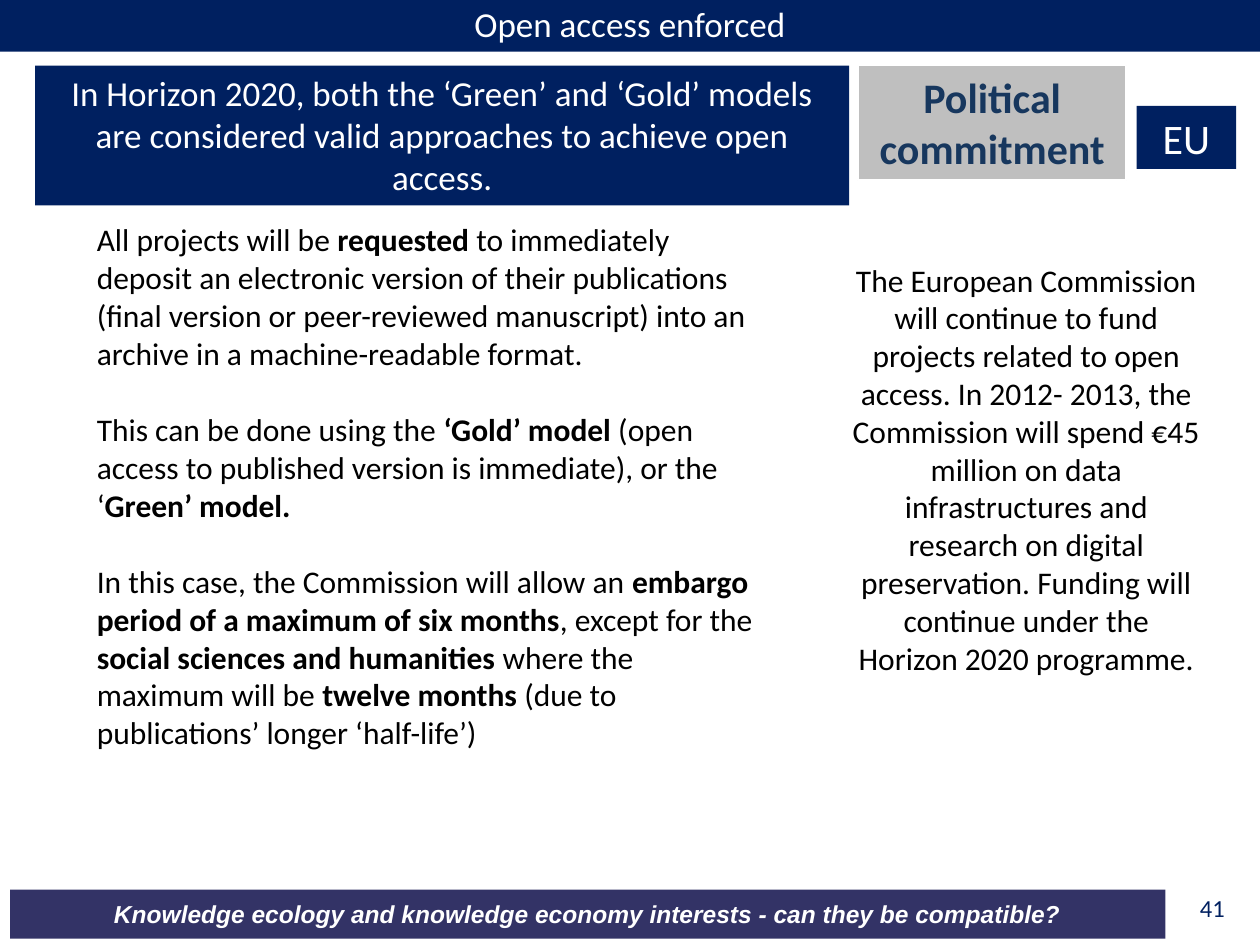
from dataclasses import dataclass
from typing import Optional

import pptx
import pptx.dml.color
import pptx.enum.shapes
import pptx.enum.text
import pptx.util

Inches = pptx.util.Inches
Pt = pptx.util.Pt
RGBColor = pptx.dml.color.RGBColor
ALIGN = pptx.enum.text.PP_ALIGN
ANCHOR = pptx.enum.text.MSO_ANCHOR

NAVY = RGBColor(0x00, 0x20, 0x60)
INDIGO = RGBColor(0x33, 0x33, 0x66)
STEEL = RGBColor(0x17, 0x37, 0x5E)
GREY = RGBColor(0xBF, 0xBF, 0xBF)
WHITE = RGBColor(0xFF, 0xFF, 0xFF)
BLACK = RGBColor(0x00, 0x00, 0x00)


@dataclass
class Block:
    """A text block; within a paragraph every second run is bold."""
    left: float
    top: float
    width: float
    height: float
    paragraphs: list[list[str]]
    size: int
    color: RGBColor = WHITE
    fill: Optional[RGBColor] = None
    line: Optional[RGBColor] = None
    align: ALIGN = ALIGN.CENTER
    anchor: ANCHOR = ANCHOR.TOP
    font: str = "Calibri"
    bold: bool = False
    italic: bool = False
    gap: int = 0
    inset: bool = True


def add_block(s: pptx.slide.Slide, b: Block) -> None:
    box = [Inches(v) for v in (b.left, b.top, b.width, b.height)]
    if b.fill is None:
        sp = s.shapes.add_textbox(*box)
    else:
        sp = s.shapes.add_shape(pptx.enum.shapes.MSO_SHAPE.RECTANGLE, *box)
        sp.shadow.inherit = False
        sp.fill.solid()
        sp.fill.fore_color.rgb = b.fill
        if b.line is None:
            sp.line.fill.background()
        else:
            sp.line.color.rgb = b.line
            sp.line.width = Pt(1)

    tf = sp.text_frame
    tf.word_wrap = True
    tf.vertical_anchor = b.anchor
    if not b.inset:
        tf.margin_left = tf.margin_right = tf.margin_top = tf.margin_bottom = 0

    for i, runs in enumerate(b.paragraphs):
        p = tf.add_paragraph() if i else tf.paragraphs[0]
        p.alignment = b.align
        p.space_before = Pt(b.gap if i else 0)
        p.font.name = b.font
        p.font.size = Pt(b.size)
        p.font.color.rgb = b.color
        p.font.bold = b.bold
        p.font.italic = b.italic
        for j, text in enumerate(runs):
            r = p.add_run()
            r.text = text
            if j % 2:
                r.font.bold = True


BLOCKS = [
    # Footer and slide number
    Block(0.08, 7.06, 9.17, 0.39,
          [["Knowledge ecology and knowledge economy interests - can they be compatible?"]],
          14, fill=INDIGO, anchor=ANCHOR.MIDDLE, font="Arial",
          bold=True, italic=True, inset=False),
    Block(9.04, 7.09, 0.68, 0.28, [["41"]], 14, NAVY, align=ALIGN.RIGHT, inset=False),
    # Title and heading boxes
    Block(0, -0.03, 10, 0.44, [["Open access enforced"]], 20, fill=NAVY),
    Block(6.81, 0.52, 2.13, 0.91, [["Political"], ["commitment"]], 24, STEEL,
          fill=GREY, line=WHITE, bold=True),
    Block(9.02, 0.84, 0.79, 0.5, [["EU"]], 24, fill=NAVY),
    Block(0.28, 0.52, 6.46, 1.11,
          [["In Horizon 2020, both the ‘Green’ and ‘Gold’ models are considered "
            "valid approaches to achieve open access."]], 20, fill=NAVY),
    # Body columns
    Block(0.67, 1.7, 5.43, 4.34, [
        ["All projects will be ", "requested",
         " to immediately deposit an electronic version of their publications "
         "(final version or peer-reviewed manuscript) into an archive in a "
         "machine-readable format."],
        ["This can be done using the ", "‘Gold’ model ",
         "(open access to published version is immediate), or the ‘",
         "Green’ model."],
        ["In this case, the Commission will allow an ",
         "embargo period of a maximum of six months", ", except for the ",
         "social sciences and humanities ", "where the maximum will be ",
         "twelve months ", "(due to publications’ longer ‘half-life’)"],
    ], 18, BLACK, align=ALIGN.LEFT, gap=22),
    Block(6.65, 2.02, 2.99, 3.43,
          [["The European Commission will continue to fund projects related to "
            "open access. In 2012- 2013, the Commission will spend €45 million on "
            "data infrastructures and research on digital preservation. Funding "
            "will continue under the Horizon 2020 programme."]], 18, BLACK),
]


def main() -> None:
    prs = pptx.Presentation()
    prs.slide_width = Inches(10)
    prs.slide_height = Inches(7.5)
    s = prs.slides.add_slide(prs.slide_layouts[6])
    for block in BLOCKS:
        add_block(s, block)
    prs.save("out.pptx")


if __name__ == "__main__":
    main()
